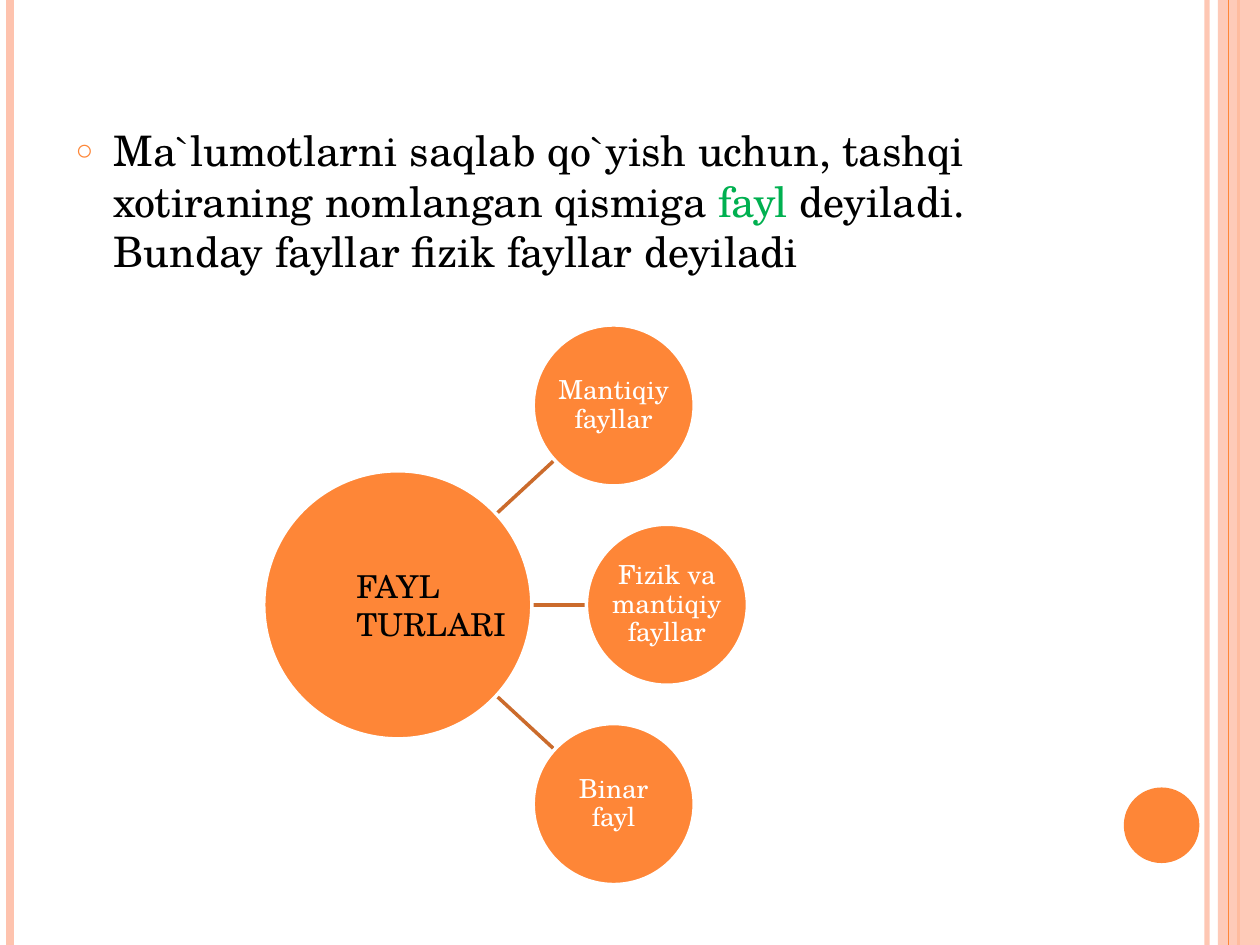
from dataclasses import dataclass
from math import hypot

from lxml.etree import SubElement
from pptx import Presentation
from pptx.dml.color import RGBColor
from pptx.enum.shapes import MSO_CONNECTOR, MSO_SHAPE
from pptx.enum.text import MSO_ANCHOR, MSO_AUTO_SIZE, PP_ALIGN
from pptx.oxml.ns import qn
from pptx.util import Pt


@dataclass(frozen=True)
class Theme:
    font: str = "TeX Gyre Schola"
    orange: str = "FE8637"
    peach: str = "FEC3AE"
    rust: str = "CB6B2C"
    green: str = "00B050"
    black: str = "000000"
    white: str = "FFFFFF"
    body_size: int = 24
    hub_size: int = 18
    satellite_size: int = 15


THEME = Theme()
WIDTH, HEIGHT = 720, 540

# Diagram geometry: hub centre, radii, and satellite offsets from the hub
HUB_X, HUB_Y, HUB_RADIUS = 227.3, 345.6, 76.6
SATELLITE_RADIUS = 46
SPOKE_START_X = 54.2
SATELLITES = [
    ("Mantiqiy fayllar", 123.4, -113.9),
    ("Fizik va mantiqiy fayllar", 153.8, 0),
    ("Binar fayl", 123.4, 113.9),
]


def apply_format(target, values):
    for name, value in values.items():
        setattr(target, name, value)


def add_run(paragraph, text, size, color):
    run = paragraph.add_run()
    run.text = text
    apply_format(run.font, {"name": THEME.font, "size": Pt(size)})
    run.font.color.rgb = RGBColor.from_string(color)


def paint(fill, color, opacity=100):
    fill.solid()
    fill.fore_color.rgb = RGBColor.from_string(color)
    if opacity < 100:
        tint = fill._xPr.find(qn("a:solidFill")).find(qn("a:srgbClr"))
        SubElement(tint, qn("a:alpha")).set("val", str(opacity * 1000))


def add_line(slide, start, end, color, width, opacity=100):
    line = slide.shapes.add_connector(
        MSO_CONNECTOR.STRAIGHT, *(Pt(v) for v in (*start, *end)))
    line.line.width = Pt(width)
    paint(line.line.fill, color, opacity)
    SubElement(line._element.spPr, qn("a:effectLst"))


def add_plain_shape(slide, kind, box, color, opacity=100):
    shape = slide.shapes.add_shape(kind, *(Pt(v) for v in box))
    shape.shadow.inherit = False
    shape.line.fill.background()
    paint(shape.fill, color, opacity)
    return shape


def add_circle(slide, x, y, radius):
    box = (x - radius, y - radius, 2 * radius, 2 * radius)
    return add_plain_shape(slide, MSO_SHAPE.OVAL, box, THEME.orange)


def add_node(slide, x, y, radius):
    node = add_circle(slide, x, y, radius)
    paint(node.line.fill, THEME.white)
    node.line.width = Pt(2)
    return node


def add_side_rails(slide):
    def rail(x, color, width, opacity=100):
        add_line(slide, (x, 0), (x, HEIGHT), color, width, opacity)

    rail(689.8, THEME.peach, 3, 93)
    rail(5.8, THEME.peach, 4.5)
    rail(707.8, THEME.orange, 1.5)
    add_plain_shape(slide, MSO_SHAPE.RECTANGLE, (696, 0, 24, HEIGHT),
                    THEME.peach, 87)
    rail(702, THEME.orange, 0.75)
    add_circle(slide, 663.8, 471.6, 21.6)


def fill_definition(body):
    apply_format(body, {"left": Pt(36), "top": Pt(67.7),
                        "width": Pt(588), "height": Pt(442)})
    body.text_frame.auto_size = MSO_AUTO_SIZE.NONE
    definition = body.text_frame.paragraphs[0]
    definition.space_before = Pt(6)
    for text, color in [
        ("Ma`lumotlarni saqlab qo`yish uchun, tashqi xotiraning "
         "nomlangan qismiga ", THEME.black),
        ("fayl ", THEME.green),
        ("deyiladi. Bunday fayllar fizik fayllar deyiladi", THEME.black),
    ]:
        add_run(definition, text, THEME.body_size, color)

    # Hanging ring bullet
    properties = definition._p.get_or_add_pPr()
    indent = Pt(21.6)
    properties.set("marL", str(indent))
    properties.set("indent", str(-indent))
    bullet_color = SubElement(properties, qn("a:buClr"))
    SubElement(bullet_color, qn("a:srgbClr")).set("val", THEME.orange)
    SubElement(properties, qn("a:buSzPct")).set("val", "70000")
    SubElement(properties, qn("a:buChar")).set("char", "○")


def add_spoke(slide, dx, dy):
    # Starts inside the hub, ends on the satellite's rim
    reach = 1 - SATELLITE_RADIUS / hypot(dx, dy)
    start = SPOKE_START_X / dx
    add_line(slide, (HUB_X + dx * start, HUB_Y + dy * start),
             (HUB_X + dx * reach, HUB_Y + dy * reach), THEME.rust, 2)


def add_satellite(slide, label, dx, dy):
    satellite = add_node(slide, HUB_X + dx, HUB_Y + dy, SATELLITE_RADIUS)
    margins = {f"margin_{side}": Pt(0.75)
               for side in ("left", "top", "right", "bottom")}
    apply_format(satellite.text_frame, {
        "word_wrap": True, "vertical_anchor": MSO_ANCHOR.MIDDLE, **margins})
    caption = satellite.text_frame.paragraphs[0]
    apply_format(caption, {"alignment": PP_ALIGN.CENTER, "line_spacing": 0.9})
    add_run(caption, label, THEME.satellite_size, THEME.white)


def add_hub_label(slide):
    label = slide.shapes.add_textbox(Pt(196.6), Pt(320.4), Pt(112.3), Pt(51))
    apply_format(label.text_frame, {
        "word_wrap": True, "auto_size": MSO_AUTO_SIZE.SHAPE_TO_FIT_TEXT})
    add_run(label.text_frame.paragraphs[0], "FAYL TURLARI",
            THEME.hub_size, THEME.black)


def main():
    deck = Presentation()
    apply_format(deck, {"slide_width": Pt(WIDTH), "slide_height": Pt(HEIGHT)})
    slide = deck.slides.add_slide(deck.slide_layouts[1])

    # The slide has no title
    title = slide.shapes.title._element
    title.getparent().remove(title)

    # Frame and definition
    add_side_rails(slide)
    fill_definition(slide.placeholders[1])

    # File types around the hub
    for _, dx, dy in SATELLITES:
        add_spoke(slide, dx, dy)
    add_node(slide, HUB_X, HUB_Y, HUB_RADIUS)
    for label, dx, dy in SATELLITES:
        add_satellite(slide, label, dx, dy)
    add_hub_label(slide)

    deck.save("out.pptx")


if __name__ == "__main__":
    main()
